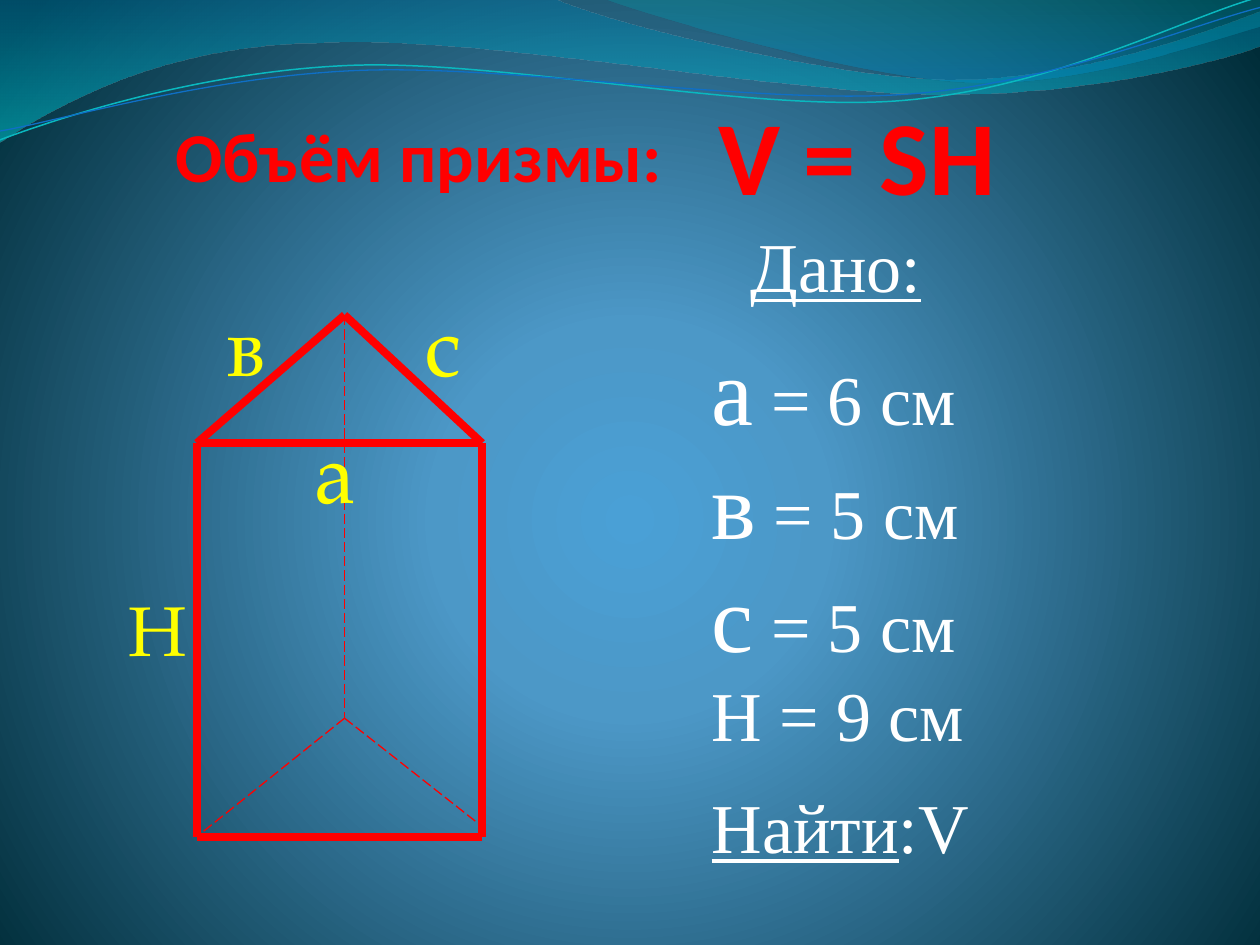
from math import cos, radians, sin

from lxml.etree import SubElement
from pptx import Presentation
from pptx.dml.color import RGBColor
from pptx.enum.dml import MSO_LINE_DASH_STYLE as DASH
from pptx.enum.shapes import MSO_CONNECTOR
from pptx.enum.text import MSO_ANCHOR as ANCHOR, MSO_AUTO_SIZE as AUTO, PP_ALIGN as ALIGN
from pptx.oxml.ns import qn
from pptx.util import Pt

RED, YELLOW, WHITE = "FF0000", "FFFF00", "FFFFFF"
SANS, SERIF, LABEL = "Calibri", "Times New Roman", "TeX Gyre Pagella"

BACKGROUND = [(0, "4AA0D6", 100), (25, "4C98C7", 100), (100, "002C38", 100)]
CENTRE = dict(l=10, t=110, r=10, b=100)

BANDS = [
    ([[(0, -0.7)], [(316.8, -0.7)],
      [(342.7, 12.2), (478.1, 45.4), (545.8, 45.4)],
      [(614.2, 45.4), (689.8, 18.7), (720, 6.5)],
      [(720.7, 25.9)],
      [(707.8, 31.7), (626.4, 54.7), (537.1, 54)],
      [(447.8, 54), (275, 20.2), (185, 24.5)],
      [(92.9, 25.2), (33.1, 59.8), (-0.7, 81.4)]],
     [(0, "0074A1", 45), (100, "00C6CF", 55)]),
    ([[(344.9, -0.7)],
      [(366.5, 7.9), (491, 44.6), (553.7, 46.8)],
      [(616.3, 49.7), (691.9, 23), (720, 15.1)],
      [(720, 0)]],
     [(0, "00A1A9", 30), (80, "008BBF", 45)]),
]
TILT = 2.7
WAVES = [
    ([[(0, 79.9)],
      [(34.6, 67), (113.8, 41), (199.4, 37.4)],
      [(284.4, 33.8), (427, 64.1), (513.4, 57.6)],
      [(599.8, 51.1), (675.4, 10.8), (718.6, -1.4)]], (359.3, 41.4), "0AB8BF", 0.85),
    ([[(0, 74.9)],
      [(33.8, 69.1), (118.1, 43.9), (203.8, 40.3)],
      [(290.2, 36.7), (429.8, 59.8), (516.2, 54)],
      [(601.9, 48.2), (677.5, 15.1), (720, 4.3)]], (359.6, 42.5), "0F6FC6", 0.75),
]

LEFT, APEX, RIGHT = 112.5, 196.9, 275.5
TOP, BASE = 253.2, 478.1
PEAK, BACK = (APEX, 180), (APEX, 410.4)
TOP_LEFT, TOP_RIGHT = (LEFT, TOP), (RIGHT, TOP)
LOW_LEFT, LOW_RIGHT = (LEFT, BASE), (RIGHT, BASE)
VISIBLE = [(TOP_LEFT, LOW_LEFT), (TOP_LEFT, TOP_RIGHT), (TOP_RIGHT, LOW_RIGHT),
           (LOW_LEFT, LOW_RIGHT), (TOP_RIGHT, PEAK), (TOP_LEFT, PEAK)]
HIDDEN = [(PEAK, BACK), (BACK, (RIGHT, 472.3)), (BACK, LOW_LEFT)]

LABELS = [("а", 163.4, 236.2, 48), ("в", 112.5, 163.4, 48),
          ("с", 225, 163.4, 48), ("H", 61.9, 331.9, 40)]
GIVEN = [[("а", 54, False), (" = 6 см", 40, False)],
         [("в", 54, False), (" = 5 см", 40, False)],
         [("с", 54, False), (" = 5 см", 40, False)],
         [("Н = 9 см", 40, False)]]


def rgb(value):
    return RGBColor.from_string(value)


def set_gradient(fill, holder, stops, centre=None):
    fill.gradient()
    grad = next(holder.iter(qn("a:gradFill")))
    for child in list(grad):
        grad.remove(child)
    gs_list = SubElement(grad, qn("a:gsLst"))
    for pos, color, alpha in stops:
        gs = SubElement(gs_list, qn("a:gs"), pos=str(pos * 1000))
        clr = SubElement(gs, qn("a:srgbClr"), val=color)
        if alpha < 100:
            SubElement(clr, qn("a:alpha"), val=str(alpha * 1000))
    if centre:
        shade = SubElement(grad, qn("a:path"), path="circle")
        SubElement(shade, qn("a:fillToRect"),
                   {side: str(v * 1000) for side, v in centre.items()})
    else:
        SubElement(grad, qn("a:lin"), ang="5400000", scaled="1")


def turn(point, centre, degrees):
    a = radians(degrees)
    dx, dy = point[0] - centre[0], point[1] - centre[1]
    return (centre[0] + dx * cos(a) - dy * sin(a),
            centre[1] + dx * sin(a) + dy * cos(a))


def add_outline(segments, close):
    first, *rest = [(x * 100, y * 100) for seg in segments for x, y in seg]
    fb = slide.shapes.build_freeform(*first, scale=Pt(1) / 100)
    fb.add_line_segments(rest, close=close)
    sp = fb.convert_to_shape()
    sp.shadow.inherit = False
    lines = iter(list(sp._element.iter(qn("a:lnTo"))))
    for seg in segments[1:]:
        node = next(lines)
        if len(seg) == 3:
            node.tag = qn("a:cubicBezTo")
            for _ in seg[1:]:
                extra = next(lines)
                node.append(extra[0])
                extra.getparent().remove(extra)
    return sp


def add_edge(start, end, width, dash=None):
    cx = slide.shapes.add_connector(MSO_CONNECTOR.STRAIGHT,
                                    *(Pt(v) for v in (*start, *end)))
    cx.line.color.rgb = rgb(RED)
    cx.line.width = Pt(width)
    if dash:
        cx.line.dash_style = dash
    SubElement(cx._element.spPr, qn("a:effectLst"))


def write(sp, paragraphs, font, color, bold=False, align=ALIGN.LEFT, wrap=True,
          anchor=ANCHOR.TOP, inset=None, auto=AUTO.NONE):
    tf = sp.text_frame
    tf.word_wrap, tf.auto_size, tf.vertical_anchor = wrap, auto, anchor
    if inset is not None:
        tf.margin_left = tf.margin_right = tf.margin_top = tf.margin_bottom = Pt(inset)
    for i, runs in enumerate(paragraphs):
        p = tf.add_paragraph() if i else tf.paragraphs[0]
        p.alignment = align
        for text, size, underline in runs:
            r = p.add_run()
            r.text = text
            r.font.name, r.font.size = font, Pt(size)
            r.font.bold, r.font.underline = bold, underline
            r.font.color.rgb = rgb(color)


def add_text(box, paragraphs, **fmt):
    write(slide.shapes.add_textbox(*(Pt(v) for v in box)), paragraphs, **fmt)


prs = Presentation()
prs.slide_width, prs.slide_height = Pt(720), Pt(540)
slide = prs.slides.add_slide(prs.slide_layouts[5])
set_gradient(slide.background.fill, slide._element, BACKGROUND, CENTRE)

for segments, stops in BANDS:
    sp = add_outline(segments, True)
    set_gradient(sp.fill, sp._element, stops)
    sp.line.fill.background()
for segments, centre, color, width in WAVES:
    sp = add_outline([[turn(pt, centre, TILT) for pt in seg] for seg in segments], False)
    sp.rotation = -TILT
    sp.fill.background()
    sp.line.color.rgb = rgb(color)
    sp.line.width = Pt(width)

heading = dict(font=SANS, color=RED, bold=True, anchor=ANCHOR.BOTTOM, inset=0)
title = slide.shapes.title
title.left, title.top, title.width, title.height = (Pt(v) for v in (73.4, 56.2, 331.9, 56.2))
write(title, [[("Объём призмы:", 40, False)]], align=ALIGN.CENTER, **heading)

for start, end in VISIBLE:
    add_edge(start, end, 4.5)
for start, end in HIDDEN:
    add_edge(start, end, 0.75, DASH.LONG_DASH)

add_text((410.4, 67.7, 180, 56.2), [[("V = SH", 60, False)]], **heading)
for text, x, y, size in LABELS:
    add_text((x, y, 56.2, 65.5 if size == 48 else 55.4), [[(text, size, False)]],
             font=LABEL, color=YELLOW, align=ALIGN.CENTER, auto=AUTO.SHAPE_TO_FIT_TEXT)

body = dict(font=SERIF, color=WHITE, auto=AUTO.SHAPE_TO_FIT_TEXT)
add_text((421.9, 123.8, 113, 55.4), [[("Дано:", 40, True)]], wrap=False, **body)
add_text((399.6, 185.8, 168.5, 252), GIVEN, **body)
add_text((399.6, 444.2, 162.7, 55.4), [[("Найти", 40, True), (":V", 40, False)]],
         wrap=False, **body)

prs.save("out.pptx")
